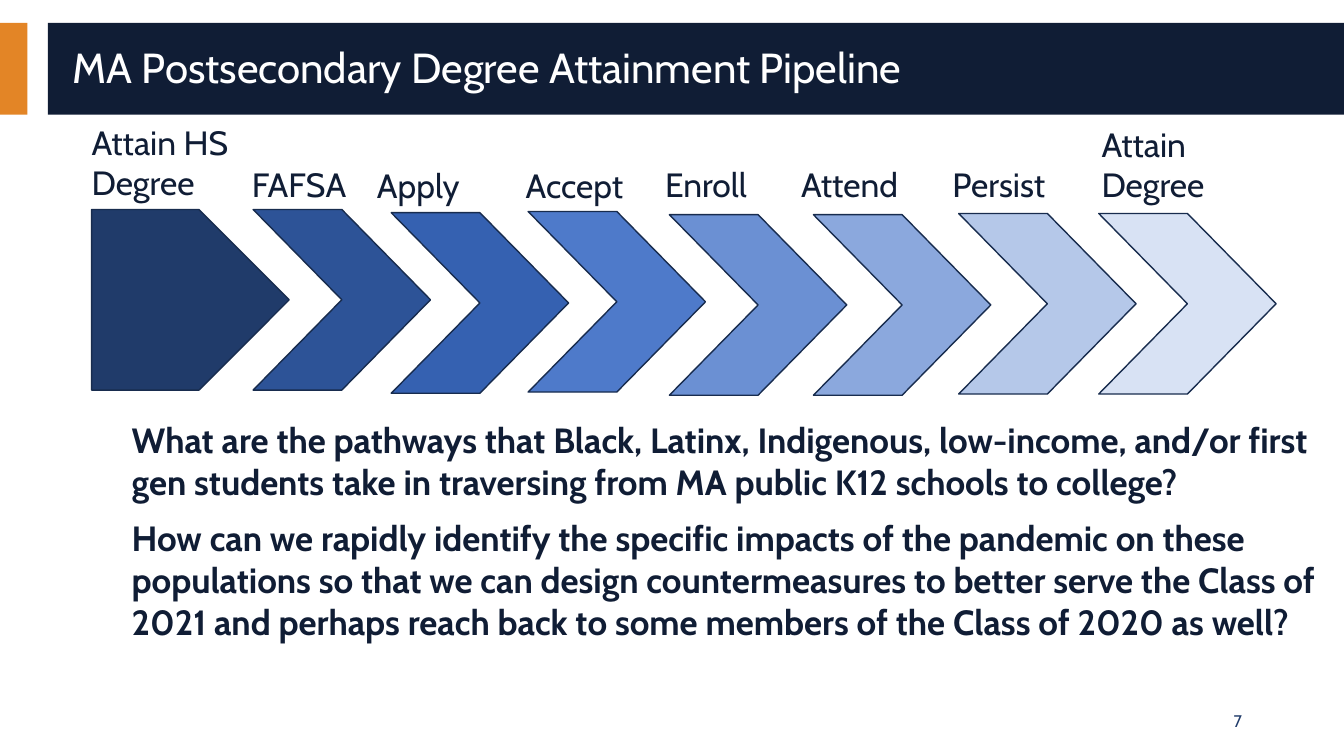
from typing import NamedTuple

from pptx import Presentation
from pptx import util as u
from pptx.dml.color import RGBColor
from pptx.enum import shapes, text
from pptx.shapes.autoshape import Shape
from pptx.slide import Slide

FONT = "Cabin"
NAVY = "101D35"
BLUE = "203B6A"
ORANGE = "E38526"
WHITE = "FFFFFF"
OUTLINE = "182C4E"
ARROW_WIDTH, ARROW_HEIGHT = 4.47, 4.55
FIRST_ARROW_WIDTH = 4.98
BAND_TOP, BAND_HEIGHT = 0.58, 2.31


class Box(NamedTuple):
    """A place on the slide, in centimetres."""
    left: float
    top: float
    width: float
    height: float


class Stage(NamedTuple):
    label: str
    label_left: float
    label_top: float
    label_width: float
    arrow_left: float
    arrow_top: float
    fill: str
    label_lines: int = 1


STAGES = [
    Stage("Attain HS Degree", 2.06, 2.95, 4.47, 2.31, 5.28, BLUE, 2),
    Stage("FAFSA", 6.1, 4.01, 4.98, 6.38, 5.28, "2D5397"),
    Stage("Apply", 9.25, 4.04, 4.98, 9.86, 5.36, "3561B1"),
    Stage("Accept", 13.0, 4.04, 4.98, 13.31, 5.33, "4E7ACA"),
    Stage("Enroll", 16.51, 4.01, 3.71, 16.87, 5.41, "6B90D3"),
    Stage("Attend", 19.94, 4.01, 4.98, 20.5, 5.41, "8BA8DD"),
    Stage("Persist", 23.75, 4.01, 3.96, 24.16, 5.38, "B5C8E9"),
    Stage("Attain Degree", 27.51, 3.0, 4.34, 27.69, 5.38, "D8E2F4", 2),
]

QUESTIONS = [
    "What are the pathways that Black, Latinx, Indigenous, low-income, and/or "
    "first gen students take in traversing from MA public K12 schools to college?",
    "How can we rapidly identify the specific impacts of the pandemic on these "
    "populations so that we can design countermeasures to better serve the Class "
    "of 2021 and perhaps reach back to some members of the Class of 2020 as well?",
]


def color(value: str) -> RGBColor:
    return RGBColor.from_string(value)


def add_block(slide: Slide, kind: shapes.MSO_SHAPE, box: Box, fill: str,
              outline: str | None = None) -> None:
    block = slide.shapes.add_shape(kind, *map(u.Cm, box))
    block.shadow.inherit = False
    block.fill.solid()
    block.fill.fore_color.rgb = color(fill)
    if outline:
        block.line.color.rgb = color(outline)
        block.line.width = u.Pt(1)
    else:
        block.line.fill.background()


def add_text(slide: Slide, box: Box, wording: list[str], size: float,
             ink: str = NAVY, bold: bool = False, gap: float = 0,
             anchor: text.MSO_ANCHOR = text.MSO_ANCHOR.TOP) -> Shape:
    """Add wrapped text, one paragraph per entry, with gap points between them."""
    area = slide.shapes.add_textbox(*map(u.Cm, box))
    frame = area.text_frame
    frame.word_wrap = True
    frame.vertical_anchor = anchor
    frame.text = "\n".join(wording)
    for index, paragraph in enumerate(frame.paragraphs):
        paragraph.font.name = FONT
        paragraph.font.size = u.Pt(size)
        paragraph.font.bold = bold
        paragraph.font.color.rgb = color(ink)
        if index:
            paragraph.space_before = u.Pt(gap)
    return area


def add_stage(slide: Slide, stage: Stage, first: bool) -> None:
    kind = shapes.MSO_SHAPE.PENTAGON if first else shapes.MSO_SHAPE.CHEVRON
    width = FIRST_ARROW_WIDTH if first else ARROW_WIDTH
    add_block(slide, kind,
              Box(stage.arrow_left, stage.arrow_top, width, ARROW_HEIGHT),
              stage.fill, OUTLINE)
    label_height = 0.25 + 1.03 * stage.label_lines
    add_text(slide,
             Box(stage.label_left, stage.label_top, stage.label_width, label_height),
             [stage.label], 24)


def main() -> None:
    deck = Presentation()
    deck.slide_width, deck.slide_height = u.Cm(33.87), u.Cm(19.05)
    slide = deck.slides.add_slide(deck.slide_layouts[6])

    rectangle = shapes.MSO_SHAPE.RECTANGLE
    add_block(slide, rectangle, Box(0, BAND_TOP, 0.69, BAND_HEIGHT), ORANGE)
    add_block(slide, rectangle, Box(1.21, BAND_TOP, 32.66, BAND_HEIGHT), NAVY)
    title = add_text(slide, Box(1.57, 0.81, 31.6, 1.88),
                     ["MA Postsecondary Degree Attainment Pipeline"], 30, WHITE,
                     anchor=text.MSO_ANCHOR.MIDDLE)
    title.text_frame.paragraphs[0].line_spacing = 0.9

    for index, stage in enumerate(STAGES):
        add_stage(slide, stage, first=index == 0)

    add_text(slide, Box(3.07, 10.41, 30.61, 8.26), QUESTIONS, 25, bold=True, gap=10)
    page_number = add_text(slide, Box(23.93, 17.65, 7.62, 1.02), ["7"], 12, BLUE,
                           anchor=text.MSO_ANCHOR.MIDDLE)
    page_number.text_frame.paragraphs[0].alignment = text.PP_ALIGN.RIGHT

    deck.save("out.pptx")


if __name__ == "__main__":
    main()
